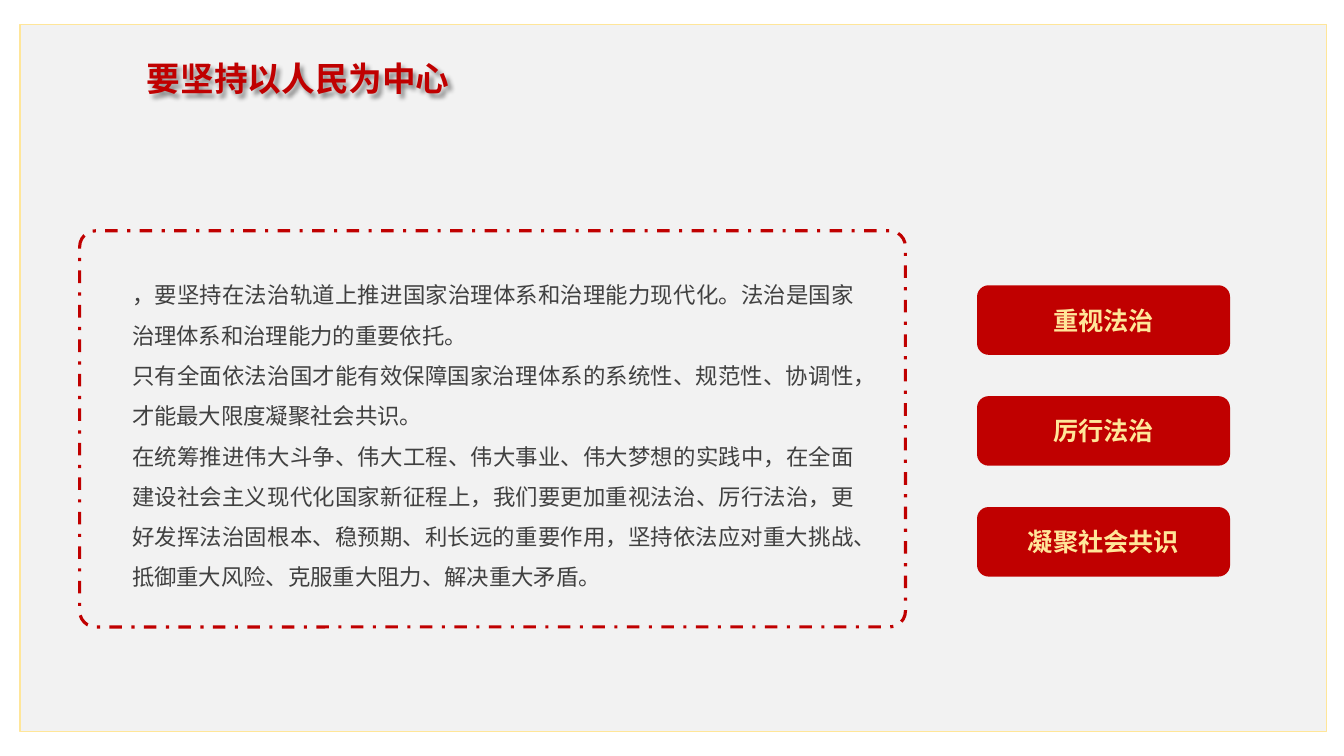
from lxml.etree import SubElement
from pptx import Presentation
from pptx.dml.color import RGBColor
from pptx.enum.dml import MSO_LINE
from pptx.enum.shapes import MSO_SHAPE
from pptx.enum.text import MSO_ANCHOR, PP_ALIGN
from pptx.oxml import parse_xml
from pptx.oxml.ns import nsdecls, qn
from pptx.util import Pt

PX = 9144
FONT = "Noto Sans CJK SC"
RED = RGBColor(0xC0, 0x00, 0x00)
GOLD = RGBColor(0xFF, 0xE6, 0x99)
PALE = RGBColor(0xF2, 0xF2, 0xF2)
INK = RGBColor(0x40, 0x40, 0x40)

TITLE = "要坚持以人民为中心"
BODY = [
    "，要坚持在法治轨道上推进国家治理体系和治理能力现代化。法治是国家治理体系和治理能力的重要依托。",
    "只有全面依法治国才能有效保障国家治理体系的系统性、规范性、协调性，才能最大限度凝聚社会共识。",
    "在统筹推进伟大斗争、伟大工程、伟大事业、伟大梦想的实践中，在全面建设社会主义现代化国家新征程上，"
    "我们要更加重视法治、厉行法治，更好发挥法治固根本、稳预期、利长远的重要作用，"
    "坚持依法应对重大挑战、抵御重大风险、克服重大阻力、解决重大矛盾。",
]
GOALS = ["重视法治", "厉行法治", "凝聚社会共识"]

TITLE_SHADOW = (
    f'<a:effectLst {nsdecls("a")}>'
    '<a:outerShdw blurRad="38100" dist="38100" dir="2700000" algn="tl">'
    '<a:srgbClr val="000000"><a:alpha val="43000"/></a:srgbClr>'
    "</a:outerShdw></a:effectLst>"
)


def scaled(box):
    return [length * PX for length in box]


def write(frame, paragraphs, size, color, bold=False, align=PP_ALIGN.LEFT,
          spacing=None, anchor=MSO_ANCHOR.TOP, inset=None):
    frame.word_wrap = True
    frame.vertical_anchor = anchor
    if inset is not None:
        frame.margin_left = frame.margin_right = inset * PX
        frame.margin_top = frame.margin_bottom = inset * PX
    for index, wording in enumerate(paragraphs):
        paragraph = frame.add_paragraph() if index else frame.paragraphs[0]
        paragraph.alignment = align
        if spacing:
            paragraph.line_spacing = spacing
        run = paragraph.add_run()
        run.text = wording
        run.font.size = Pt(size)
        run.font.bold = bold
        run.font.color.rgb = color
        run.font.name = FONT
        SubElement(run.font._element, qn("a:ea"), typeface=FONT)


def add_panel(slide, box, geometry, fill=None, line=None, weight=1):
    panel = slide.shapes.add_shape(geometry, *scaled(box))
    panel.shadow.inherit = False
    if fill is None:
        panel.fill.background()
    else:
        panel.fill.solid()
        panel.fill.fore_color.rgb = fill
    if line is None:
        panel.line.fill.background()
    else:
        panel.line.color.rgb = line
        panel.line.width = Pt(weight)
    return panel


def add_title(slide, box):
    title = slide.shapes.add_textbox(*scaled(box))
    write(title.text_frame, [TITLE], 24, RED, bold=True)
    title._element.spPr.append(parse_xml(TITLE_SHADOW))


def add_statement(slide, box):
    left, top, width, height = box
    statement = slide.shapes.add_textbox(
        *scaled((left + 52, top + 37, width - 102, height - 74)))
    write(statement.text_frame, BODY, 16, INK, align=PP_ALIGN.JUSTIFY,
          spacing=1.5, inset=0)
    border = add_panel(slide, box, MSO_SHAPE.ROUNDED_RECTANGLE,
                       line=RED, weight=2.25)
    border.adjustments[0] = 0.04
    border.line.dash_style = MSO_LINE.DASH_DOT


def add_goals(slide, box):
    left, top, width, height = box
    button_height = 69
    pitch = (height - button_height) // (len(GOALS) - 1)
    for index, goal in enumerate(GOALS):
        button = add_panel(slide, (left, top + index * pitch, width, button_height),
                           MSO_SHAPE.ROUNDED_RECTANGLE, fill=RED)
        write(button.text_frame, [goal], 18, GOLD, bold=True,
              align=PP_ALIGN.CENTER, anchor=MSO_ANCHOR.MIDDLE)


def main():
    deck = Presentation()
    deck.slide_width, deck.slide_height = scaled((1333, 750))
    slide = deck.slides.add_slide(deck.slide_layouts[6])
    add_panel(slide, (20, 24, 1296, 702), MSO_SHAPE.RECTANGLE,
              fill=PALE, line=GOLD)
    add_title(slide, (136, 53, 526, 50))
    add_statement(slide, (79, 229, 819, 393))
    add_goals(slide, (969, 283, 251, 289))
    deck.save("out.pptx")


if __name__ == "__main__":
    main()
